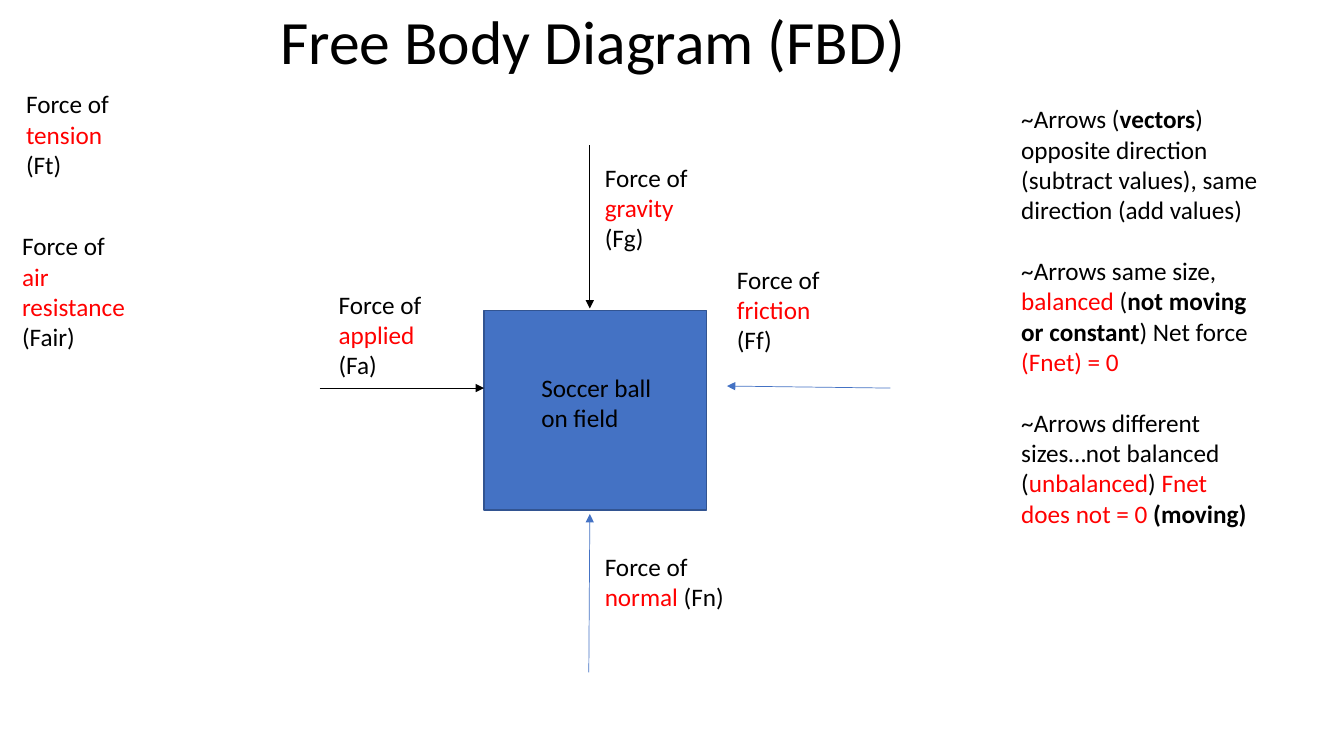
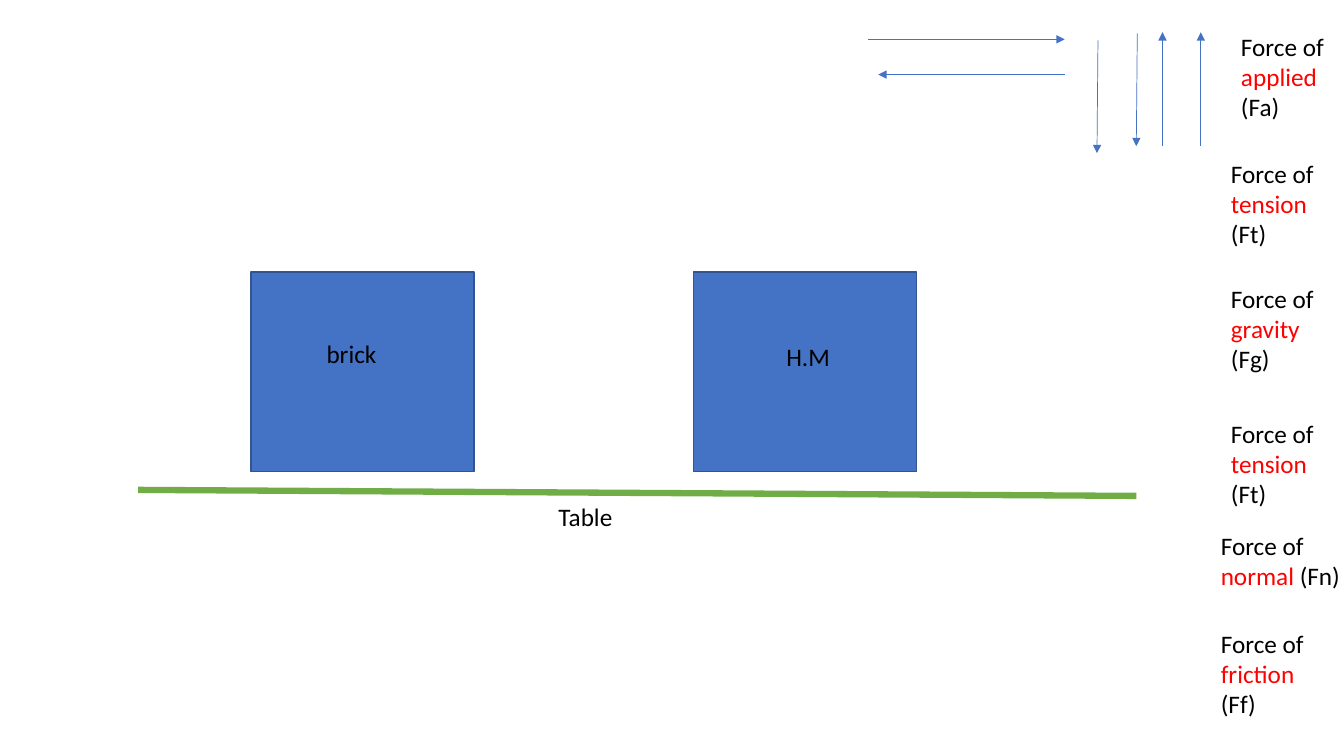
from dataclasses import dataclass
from lxml.etree import SubElement
from pptx import Presentation
from pptx.dml.color import RGBColor
from pptx.enum.shapes import MSO_CONNECTOR, MSO_SHAPE
from pptx.enum.text import MSO_ANCHOR, MSO_AUTO_SIZE, PP_ALIGN
from pptx.oxml.ns import qn
from pptx.util import Inches, Pt

COLUMNS, ROWS = 13.33, 7.5
CELL = Inches(1)
FONT = "Calibri"
BLACK, RED, BLUE, NAVY, GREEN = "000000", "FF0000", "4472C4", "325491", "70AD47"
PLAIN = {"color": BLACK, "bold": False}
KEY = {"color": RED, "bold": False}
STRONG = {"color": BLACK, "bold": True}
LINE_GAP = 22
BODY_WIDTH, BODY_HEIGHT = 2.21, 1.98

FORCES = {
    "applied": ("Fa", 1.22, 1.01),
    "tension": ("Ft", 1.22, 1.01),
    "gravity": ("Fg", 1.22, 1.01),
    "friction": ("Ff", 1.22, 1.01),
    "normal": ("Fn", 1.43, 0.71),
    "air resistance": ("Fair", 1.32, 1.31),
}

RULES = [
    [("~Arrows (", PLAIN), ("vectors", STRONG),
     (") opposite direction (subtract values), same direction (add values)", PLAIN)],
    [("~Arrows same size, ", PLAIN), ("balanced", KEY), (" (", PLAIN),
     ("not moving or constant", STRONG), (") Net force ", PLAIN), ("(Fnet) = 0", KEY)],
    [("~Arrows different sizes…not balanced (", PLAIN), ("unbalanced", KEY),
     (") ", PLAIN), ("Fnet does not = 0 ", KEY), ("(moving)", STRONG)],
]


@dataclass
class Box:
    left: float
    top: float
    width: float
    height: float

    def inner(self, left, top, width, height):
        return Box(self.left + left, self.top + top, width, height)

    def point(self, column, row):
        return int((self.left + column) * CELL), int((self.top + row) * CELL)

    def frame(self):
        return [int(value * CELL) for value in (self.left, self.top, self.width, self.height)]


def rgb(value):
    return RGBColor.from_string(value)


def add_span(para, text, style, size=18):
    span = para.add_run()
    span.text = text
    for name, value in {"name": FONT, "size": Pt(size), "bold": style["bold"]}.items():
        setattr(span.font, name, value)
    span.font.color.rgb = rgb(style["color"])


def add_text(page, box, paragraphs, gap=0):
    frame = page.shapes.add_textbox(*box.frame()).text_frame
    for name, value in {"word_wrap": True, "auto_size": MSO_AUTO_SIZE.SHAPE_TO_FIT_TEXT}.items():
        setattr(frame, name, value)
    for index, spans in enumerate(paragraphs):
        para = frame.add_paragraph() if index else frame.paragraphs[0]
        para.space_before = Pt(gap if index else 0)
        for text, style in spans:
            add_span(para, text, style)


def add_title(page, box, text):
    title = page.shapes.title
    for name, value in zip(("left", "top", "width", "height"), box.frame()):
        setattr(title, name, value)
    frame = title.text_frame
    for name, value in {"vertical_anchor": MSO_ANCHOR.MIDDLE, "word_wrap": True,
                        "auto_size": MSO_AUTO_SIZE.NONE}.items():
        setattr(frame, name, value)
    para = frame.paragraphs[0]
    for name, value in {"alignment": PP_ALIGN.LEFT, "line_spacing": 0.9}.items():
        setattr(para, name, value)
    add_span(para, text, PLAIN, 44)


def add_line(page, box, start, end, color=BLUE, width=0.5, arrow=True):
    line = page.shapes.add_connector(MSO_CONNECTOR.STRAIGHT, *box.point(*start), *box.point(*end))
    line.line.color.rgb = rgb(color)
    line.line.width = Pt(width)
    if arrow:
        SubElement(line.line._get_or_add_ln(), qn("a:tailEnd"), type="triangle")
    SubElement(line._element.spPr, qn("a:effectLst"))


def add_body(page, box, label, label_box):
    body = page.shapes.add_shape(MSO_SHAPE.RECTANGLE, *box.frame())
    body.shadow.inherit = False
    body.fill.solid()
    body.fill.fore_color.rgb = rgb(BLUE)
    body.line.color.rgb = rgb(NAVY)
    body.line.width = Pt(1)
    add_text(page, box.inner(*label_box), [[(label, PLAIN)]])


def add_forces(page, box, places):
    for force, column, row in places:
        symbol, width, height = FORCES[force]
        spans = [("Force of ", PLAIN), (force, KEY), (f" ({symbol})", PLAIN)]
        add_text(page, box.inner(column, row, width, height), [spans])


def add_ball_diagram(page, box):
    add_body(page, box.inner(1.63, 1.64, BODY_WIDTH, BODY_HEIGHT),
             "Soccer ball on field", (0.47, 0.56, 1.38, 0.71))
    for start, end, color in (
        ((0, 2.41), (1.63, 2.41), BLACK),
        ((5.66, 2.41), (4.04, 2.39), BLUE),
        ((2.67, 5.23), (2.68, 3.66), BLUE),
        ((2.68, 0), (2.68, 1.62), BLACK),
    ):
        add_line(page, box, start, end, color)
    add_forces(page, box, [("normal", 2.73, 3.98), ("applied", 0.09, 1.38),
                           ("gravity", 2.73, 0.12), ("friction", 4.04, 1.13)])


def add_table_scene(page, box):
    for label, column, label_box in (
        ("brick", 1.12, (0.65, 0.61, 0.72, 0.4)),
        ("H.M", 5.51, (0.82, 0.64, 0.91, 0.4)),
    ):
        add_body(page, box.inner(column, 0, BODY_WIDTH, BODY_HEIGHT), label, label_box)
    add_line(page, box, (0, 2.16), (9.9, 2.22), GREEN, 4.5, False)
    add_text(page, box.inner(4.07, 2.22, 2.87, 0.4), [[("Table", PLAIN)]])


def add_spare_arrows(page, box):
    add_line(page, box, (0, 0.07), (1.95, 0.07))
    add_line(page, box, (1.95, 0.42), (0.1, 0.42))
    for column, row in ((2.28, 0.08), (2.67, 0.01)):
        add_line(page, box, (column, row), (column - 0.01, row + 1.12))
    for column in (2.92, 3.3):
        add_line(page, box, (column, 1.13), (column, 0))


def build_diagram_page(deck):
    page = deck.slides.add_slide(deck.slide_layouts[5])
    add_title(page, Box(2.68, -0.28, 11.5, 1.45), "Free Body Diagram (FBD)")
    add_ball_diagram(page, Box(3.17, 1.44, 5.66, 5.23))
    add_forces(page, Box(0.12, 0.83, 1.32, 2.72),
               [("tension", 0.04, 0), ("air resistance", 0, 1.41)])
    add_text(page, Box(10.03, 0.98, 2.58, 4.34), RULES, LINE_GAP)


def build_exercise_page(deck):
    page = deck.slides.add_slide(deck.slide_layouts[6])
    add_table_scene(page, Box(1.37, 2.7, 9.9, 2.62))
    add_spare_arrows(page, Box(8.61, 0.32, 3.3, 1.2))
    add_forces(page, Box(12.01, 0.26, 1.43, 6.93),
               [("applied", 0.2, 0), ("tension", 0.1, 1.26), ("gravity", 0.1, 2.5),
                ("tension", 0.1, 3.84), ("normal", 0, 4.95), ("friction", 0, 5.92)])


def main():
    deck = Presentation()
    deck.slide_width = int(COLUMNS * CELL)
    deck.slide_height = int(ROWS * CELL)
    build_diagram_page(deck)
    build_exercise_page(deck)
    deck.save("out.pptx")


if __name__ == "__main__":
    main()
